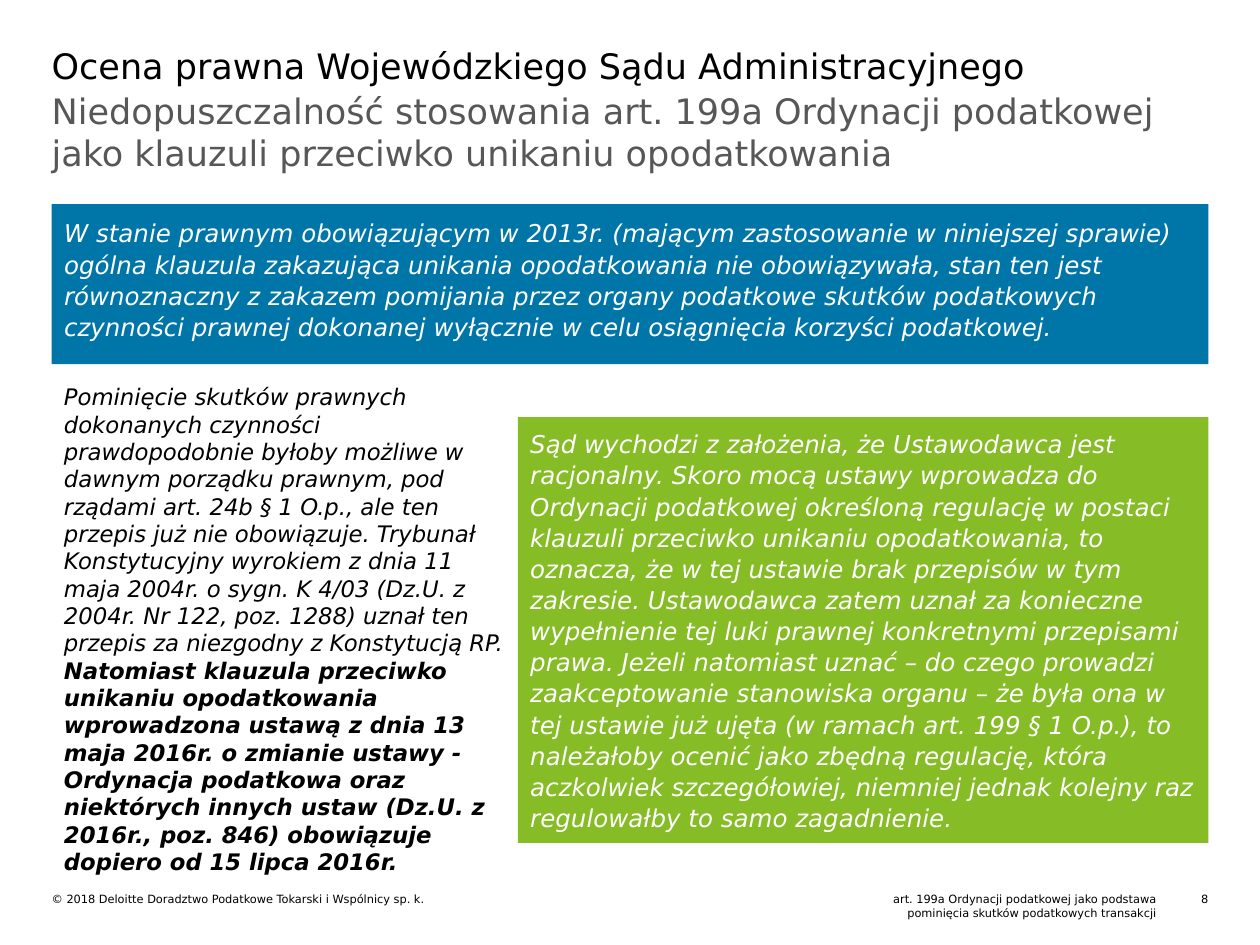
from pptx import Presentation
from pptx.dml.color import RGBColor
from pptx.enum import shapes, text
from pptx.util import Inches, Pt

FONT = "DejaVu Sans"
LEFT, WIDTH = 0.41, 9.18
RIGHT = LEFT + WIDTH
BLACK, GREY, WHITE = "000000", "575757", "FFFFFF"
BLUE, GREEN = "0076A8", "86BC25"

TITLE = "Ocena prawna Wojewódzkiego Sądu Administracyjnego"
SUBTITLE = ("Niedopuszczalność stosowania art. 199a Ordynacji podatkowej "
            "jako klauzuli przeciwko unikaniu opodatkowania")
LEGAL_STATE = (
    "W stanie prawnym obowiązującym w 2013r. (mającym zastosowanie w niniejszej sprawie) "
    "ogólna klauzula zakazująca unikania opodatkowania nie obowiązywała, stan ten jest "
    "równoznaczny z zakazem pomijania przez organy podatkowe skutków podatkowych "
    "czynności prawnej dokonanej wyłącznie w celu osiągnięcia korzyści podatkowej.")
FORMER_LAW = (
    "Pominięcie skutków prawnych dokonanych czynności prawdopodobnie byłoby możliwe w "
    "dawnym porządku prawnym, pod rządami art. 24b § 1 O.p., ale ten przepis już nie "
    "obowiązuje. Trybunał Konstytucyjny wyrokiem z dnia 11 maja 2004r. o sygn. K 4/03 "
    "(Dz.U. z 2004r. Nr 122, poz. 1288) uznał ten przepis za niezgodny z Konstytucją RP. ")
NEW_CLAUSE = (
    "Natomiast klauzula przeciwko unikaniu opodatkowania wprowadzona ustawą z dnia 13 "
    "maja 2016r. o zmianie ustawy - Ordynacja podatkowa oraz niektórych innych ustaw "
    "(Dz.U. z 2016r., poz. 846) obowiązuje dopiero od 15 lipca 2016r.")
COURT_VIEW = (
    "Sąd wychodzi z założenia, że Ustawodawca jest racjonalny. Skoro mocą ustawy "
    "wprowadza do Ordynacji podatkowej określoną regulację w postaci klauzuli przeciwko "
    "unikaniu opodatkowania, to oznacza, że w tej ustawie brak przepisów w tym zakresie. "
    "Ustawodawca zatem uznał za konieczne wypełnienie tej luki prawnej konkretnymi "
    "przepisami prawa. Jeżeli natomiast uznać – do czego prowadzi zaakceptowanie "
    "stanowiska organu – że była ona w tej ustawie już ujęta (w ramach art. 199 § 1 O.p.), "
    "to należałoby ocenić jako zbędną regulację, która aczkolwiek szczegółowiej, niemniej "
    "jednak kolejny raz regulowałby to samo zagadnienie.")
COPYRIGHT = "© 2018 Deloitte Doradztwo Podatkowe Tokarski i Wspólnicy sp. k."
TOPIC = "art. 199a Ordynacji podatkowej jako podstawa\vpominięcia skutków podatkowych transakcji"


def rgb(hex_color):
    return RGBColor.from_string(hex_color)


def set_format(target, values):
    for name, value in values.items():
        setattr(target, name, value)


def style_paragraph(paragraph, size, color, italic=False, **layout):
    set_format(paragraph.font, {"name": FONT, "size": Pt(size), "italic": italic})
    paragraph.font.color.rgb = rgb(color)
    set_format(paragraph, layout)


def set_frame(frame, insets, anchor=text.MSO_ANCHOR.TOP):
    sides = ("margin_left", "margin_top", "margin_right", "margin_bottom")
    set_format(frame, {side: Inches(inset) for side, inset in zip(sides, insets)})
    set_format(frame, {"word_wrap": True, "vertical_anchor": anchor})


def add_label(slide, box, wording, size, color=BLACK, insets=(0, 0, 0, 0), **layout):
    label = slide.shapes.add_textbox(*map(Inches, box))
    set_frame(label.text_frame, insets)
    paragraph = label.text_frame.paragraphs[0]
    paragraph.text = wording
    style_paragraph(paragraph, size, color, **layout)
    return paragraph


def add_panel(slide, box, wording, fill, anchor):
    panel = slide.shapes.add_shape(shapes.MSO_SHAPE.RECTANGLE, *map(Inches, box))
    panel.shadow.inherit = False
    panel.fill.solid()
    panel.fill.fore_color.rgb = rgb(fill)
    panel.line.fill.background()
    set_frame(panel.text_frame, (0.1,) * 4, anchor)
    paragraph = panel.text_frame.paragraphs[0]
    paragraph.text = wording
    style_paragraph(paragraph, 14, WHITE, italic=True, line_spacing=1.06,
                    alignment=text.PP_ALIGN.LEFT)


def add_heading(slide, left, top, width):
    add_label(slide, (left, top, width, 0.44), TITLE, 20)
    add_label(slide, (left, top + 0.36, width, 0.83), SUBTITLE, 20, GREY)


def add_argument(slide, left, top, width):
    """Places the legal history beside the court's reasoning."""
    history_width = 3.7
    history = add_label(slide, (left, top, history_width, 4.04), FORMER_LAW, 13,
                        insets=(0.1, 0.05, 0.1, 0.05), italic=True)
    clause = history.add_run()
    clause.text = NEW_CLAUSE
    clause.font.bold = True
    add_panel(slide, (left + history_width, top + 0.32, width - history_width, 3.38),
              COURT_VIEW, GREEN, text.MSO_ANCHOR.MIDDLE)


def add_footer(slide, left, top, right):
    size, to_right = 6.5, text.PP_ALIGN.RIGHT
    add_label(slide, (left, top, 4.39, 0.11), COPYRIGHT, size)
    add_label(slide, (right - 4.39, top, 4.02, 0.22), TOPIC, size,
              insets=(0, 0, 0.04, 0), alignment=to_right)
    add_label(slide, (right - 0.25, top, 0.25, 0.11), "8", size, alignment=to_right)


def main():
    deck = Presentation()
    deck.slide_width, deck.slide_height = Inches(10), Inches(7.5)
    slide = deck.slides.add_slide(deck.slide_layouts[6])
    add_heading(slide, LEFT, 0.35, WIDTH)
    add_panel(slide, (LEFT, 1.62, WIDTH, 1.27), LEGAL_STATE, BLUE, text.MSO_ANCHOR.TOP)
    add_argument(slide, LEFT, 2.99, WIDTH)
    add_footer(slide, LEFT, 7.08, RIGHT)
    deck.save("out.pptx")


if __name__ == "__main__":
    main()
